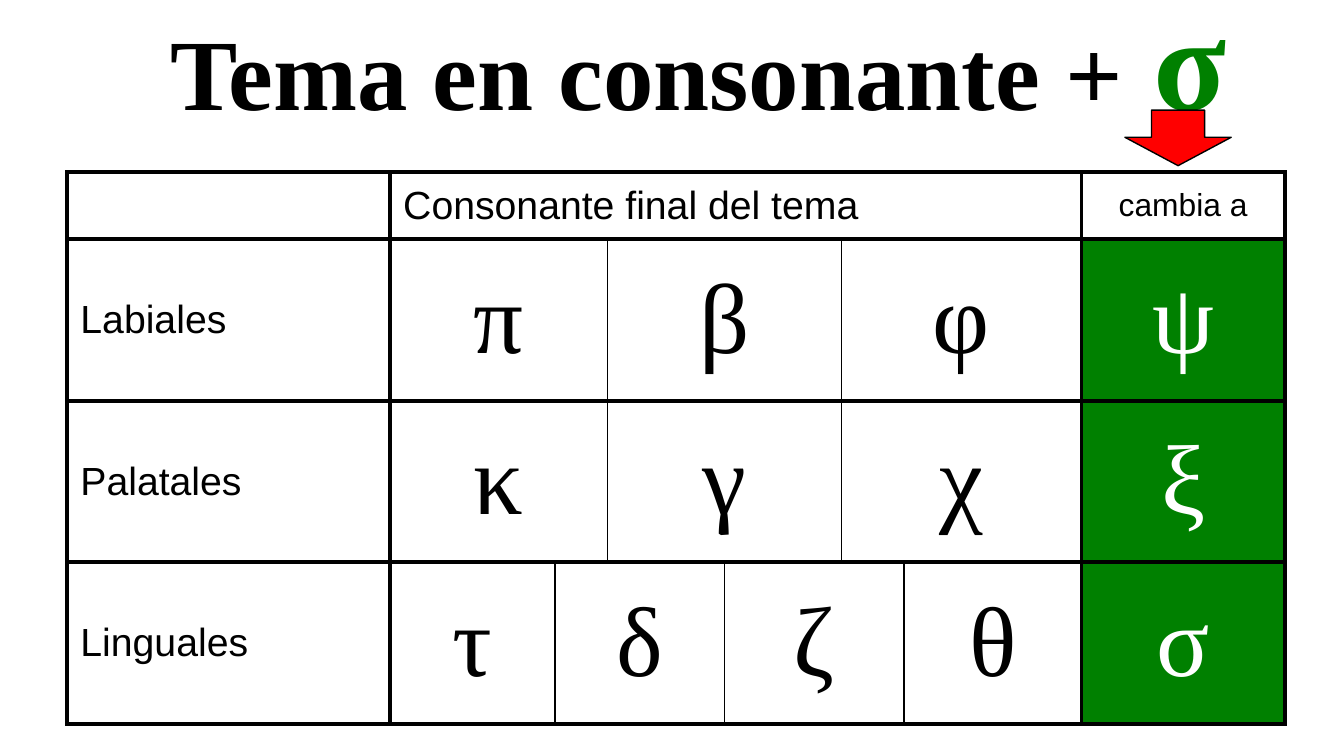
from lxml import etree
from pptx import Presentation
from pptx.dml.color import RGBColor
from pptx.enum import shapes, text
from pptx.oxml import ns
from pptx.util import Cm, Pt

BLACK = RGBColor(0, 0, 0)
WHITE = RGBColor(255, 255, 255)
GREEN = RGBColor(0, 128, 0)
RED = RGBColor(255, 0, 0)
SANS, SERIF = "Arial", "Times New Roman"
THICK, THIN = 2.25, 1

TITLE = [("Tema en consonante +", 54, BLACK), (" ", 66, BLACK), ("σ", 72, GREEN)]
HEADER = ("Consonante final del tema", "cambia a")
GROUPS = [
    ("Labiales", "πβφ", "ψ", (2, 2, 2)),
    ("Palatales", "κγχ", "ξ", (2, 2, 2)),
    ("Linguales", "τδζθ", "σ", (1, 2, 2, 1)),
]
COLUMNS = (6.1, 3.12, 0.99, 2.21, 2.21, 1.19, 3.35, 3.84)
ROWS = (1.27, 3.05, 3.05, 3.05)
LAST = len(COLUMNS) - 1


def add_run(p, words, size, font, color, bold=False):
    r = p.add_run()
    r.text = words
    r.font.size = Pt(size)
    r.font.name = font
    r.font.bold = bold
    r.font.color.rgb = color


def set_borders(cell, left, right):
    tcPr = cell._tc.get_or_add_tcPr()
    for side, width in (("L", left), ("R", right), ("T", THICK), ("B", THICK)):
        ln = etree.SubElement(tcPr, ns.qn("a:ln" + side), w=str(int(Pt(width))))
        fill = etree.SubElement(ln, ns.qn("a:solidFill"))
        etree.SubElement(fill, ns.qn("a:srgbClr"), val=str(BLACK))


def fill_cell(table, row, col, span, words, size, font=SANS, color=BLACK,
              back=None, centred=True, left=THICK, right=THICK):
    for c in range(col, col + span):
        part = table.cell(row, c)
        set_borders(part, left, right)
        if back is None:
            part.fill.background()
        else:
            part.fill.solid()
            part.fill.fore_color.rgb = back
    cell = table.cell(row, col)
    if span > 1:
        cell.merge(table.cell(row, col + span - 1))
    cell.vertical_anchor = text.MSO_ANCHOR.MIDDLE
    cell.margin_left = cell.margin_right = Cm(0.25)
    cell.margin_top = cell.margin_bottom = Cm(0.1)
    p = cell.text_frame.paragraphs[0]
    p.alignment = text.PP_ALIGN.CENTER if centred else text.PP_ALIGN.LEFT
    if words:
        add_run(p, words, size, font, color)


prs = Presentation()
prs.slide_width, prs.slide_height = Cm(25.4), Cm(14.28)
s = prs.slides.add_slide(prs.slide_layouts[6])

title = s.shapes.add_textbox(Cm(1.7), Cm(-0.86), Cm(23.01), Cm(3.33))
tf = title.text_frame
tf.word_wrap = True
tf.margin_top, tf.margin_bottom = Cm(0.4), 0
p = tf.paragraphs[0]
p.alignment = text.PP_ALIGN.CENTER
for words, size, color in TITLE:
    add_run(p, words, size, SERIF, color, bold=True)

frame = s.shapes.add_table(len(ROWS), len(COLUMNS), Cm(1.27), Cm(3.25),
                           Cm(sum(COLUMNS)), Cm(sum(ROWS)))
table = frame.table
table.first_row = table.horz_banding = False
for column, width in zip(table.columns, COLUMNS):
    column.width = Cm(width)
for row, height in zip(table.rows, ROWS):
    row.height = Cm(height)

fill_cell(table, 0, 0, 1, "", 21)
fill_cell(table, 0, 1, LAST - 1, HEADER[0], 21, centred=False)
fill_cell(table, 0, LAST, 1, HEADER[1], 17)
for row, (name, letters, result, spans) in enumerate(GROUPS, 1):
    fill_cell(table, row, 0, 1, name, 21, centred=False)
    col = 1
    for letter, span in zip(letters, spans):
        fill_cell(table, row, col, span, letter, 53, SERIF,
                  left=THICK if col == 1 else THIN,
                  right=THICK if col + span == LAST else THIN)
        col += span
    fill_cell(table, row, LAST, 1, result, 53, SERIF, WHITE, GREEN)

arrow = s.shapes.add_shape(shapes.MSO_SHAPE.DOWN_ARROW,
                           Cm(21.26), Cm(2.08), Cm(2.01), Cm(1.05))
arrow.shadow.inherit = False
arrow.adjustments[0], arrow.adjustments[1] = 0.5, 0.51
arrow.fill.solid()
arrow.fill.fore_color.rgb = RED
arrow.line.color.rgb = BLACK
arrow.line.width = Pt(0.75)

prs.save("out.pptx")
